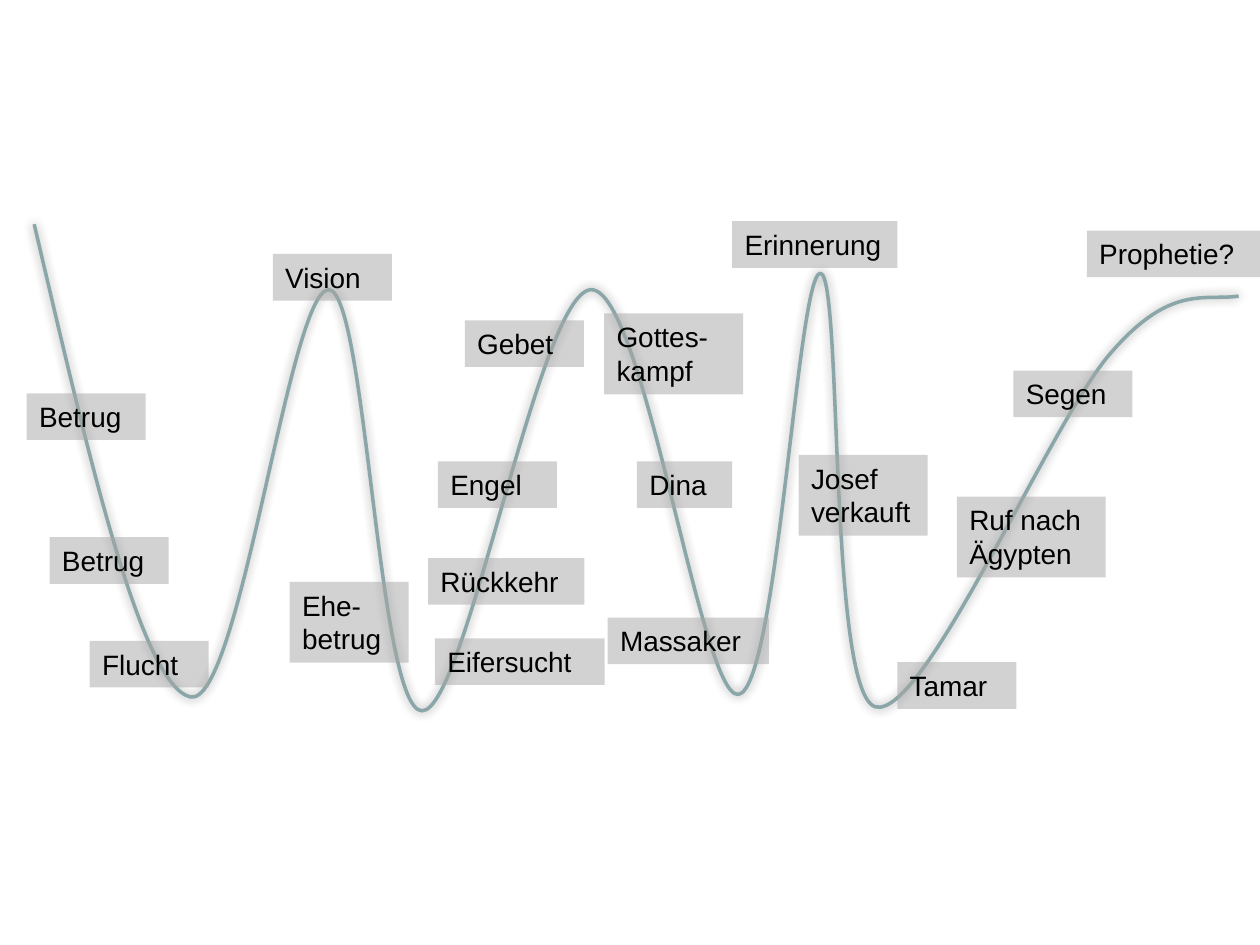
import pptx
import pptx.dml.color
import pptx.enum.text
import pptx.util
from lxml import etree
from pptx.oxml.ns import qn

Cm, Pt = pptx.util.Cm, pptx.util.Pt

LINE_HEIGHTS = {1: 0.94, 2: 1.63}
USUAL_WIDTH = 2.4

# Curve of ups and downs: start, then (control, control, end) per section, in cm
START = (0.19, 0.12)
SECTIONS = [
    ((1.28, 4.77), (2.34, 9.42), (3.34, 9.65)),
    ((4.33, 9.85), (5.34, 1.42), (6.13, 1.44)),
    ((6.89, 1.49), (7.12, 9.93), (8.01, 9.93)),
    ((8.9, 9.93), (10.35, 1.52), (11.41, 1.44)),
    ((12.48, 1.39), (13.62, 9.65), (14.38, 9.6)),
    ((15.17, 9.54), (15.58, 1.09), (16.04, 1.11)),
    ((16.49, 1.16), (16.19, 9.57), (17.15, 9.85)),
    ((18.14, 10.1), (20.68, 4.08), (21.9, 2.71)),
    ((23.1, 1.32), (23.78, 1.67), (24.47, 1.57)),
]

# Events along the curve: text, left, top, width, lines
EVENTS = [
    ("Betrug", 0.04, 3.53, USUAL_WIDTH, 1),
    ("Betrug", 0.5, 6.43, USUAL_WIDTH, 1),
    ("Dina", 12.34, 4.9, 1.92, 1),
    ("Massaker", 11.75, 8.05, 3.25, 1),
    ("Erinnerung", 14.26, 0.06, 3.33, 1),
    ("Josef verkauft", 15.6, 4.77, 2.6, 2),
    ("Tamar", 17.59, 8.95, USUAL_WIDTH, 1),
    ("Ruf nach Ägypten", 18.79, 5.61, 3, 2),
    ("Segen", 19.93, 3.07, USUAL_WIDTH, 1),
    ("Prophetie?", 21.41, 0.25, 3.51, 1),
    ("Engel", 8.33, 4.9, USUAL_WIDTH, 1),
    ("Rückkehr", 8.13, 6.85, 3.15, 1),
    ("Eifersucht", 8.27, 8.47, 3.42, 1),
    ("Ehe-betrug", 5.34, 7.33, USUAL_WIDTH, 2),
    ("Vision", 5, 0.72, USUAL_WIDTH, 1),
    ("Flucht", 1.31, 8.52, USUAL_WIDTH, 1),
    ("Gebet", 8.87, 2.06, USUAL_WIDTH, 1),
    ("Gottes-kampf", 11.68, 1.92, 2.8, 2),
]


def paint(color_format, hex_color):
    color_format.rgb = pptx.dml.color.RGBColor.from_string(hex_color)


def set_alpha(color_element, percent):
    etree.SubElement(color_element, qn("a:alpha"), val=str(percent * 1000))


def add_life_curve(slide, left, top):
    def place(point):
        return Cm(left + point[0]), Cm(top + point[1])

    builder = slide.shapes.build_freeform(*place(START))
    builder.add_line_segments([place(end) for _, _, end in SECTIONS], close=False)
    curve = builder.convert_to_shape()

    # Bend each straight section with its two control points
    for section, segment in zip(SECTIONS, list(curve.element.iter(qn("a:lnTo")))):
        bend = etree.Element(qn("a:cubicBezTo"))
        for point in section:
            x, y = place(point)
            etree.SubElement(bend, qn("a:pt"), x=str(x - curve.left), y=str(y - curve.top))
        segment.getparent().replace(segment, bend)

    curve.fill.background()
    paint(curve.line.color, "8AA6A8")
    curve.line.width = Pt(2)

    # Soft shadow
    curve.shadow.inherit = False
    effects = curve.element.spPr.find(qn("a:effectLst"))
    shadow = etree.SubElement(effects, qn("a:outerShdw"), blurRad=str(Pt(6)),
                              dist="0", dir=str(315 * 60000), rotWithShape="0")
    set_alpha(etree.SubElement(shadow, qn("a:srgbClr"), val="000000"), 40)


def add_events(slide, left, top):
    for text, x, y, width, lines in EVENTS:
        label = slide.shapes.add_textbox(Cm(left + x), Cm(top + y),
                                         Cm(width), Cm(LINE_HEIGHTS[lines]))
        label.fill.solid()
        paint(label.fill.fore_color, "A6A6A6")
        set_alpha(label.element.spPr.find(qn("a:solidFill"))[0], 50)
        frame = label.text_frame
        frame.word_wrap = True
        frame.auto_size = pptx.enum.text.MSO_AUTO_SIZE.SHAPE_TO_FIT_TEXT
        paragraph = frame.paragraphs[0]
        paragraph.text = text
        paragraph.font.name = "Arial"
        paragraph.font.size = Pt(16)
        paint(paragraph.font.color, "000000")


def main():
    deck = pptx.Presentation()
    deck.slide_width, deck.slide_height = Cm(25.4), Cm(19.05)
    slide = deck.slides.add_slide(deck.slide_layouts[6])
    timeline_corner = (0.5, 4.4)
    add_life_curve(slide, *timeline_corner)
    add_events(slide, *timeline_corner)
    deck.save("out.pptx")


if __name__ == "__main__":
    main()
